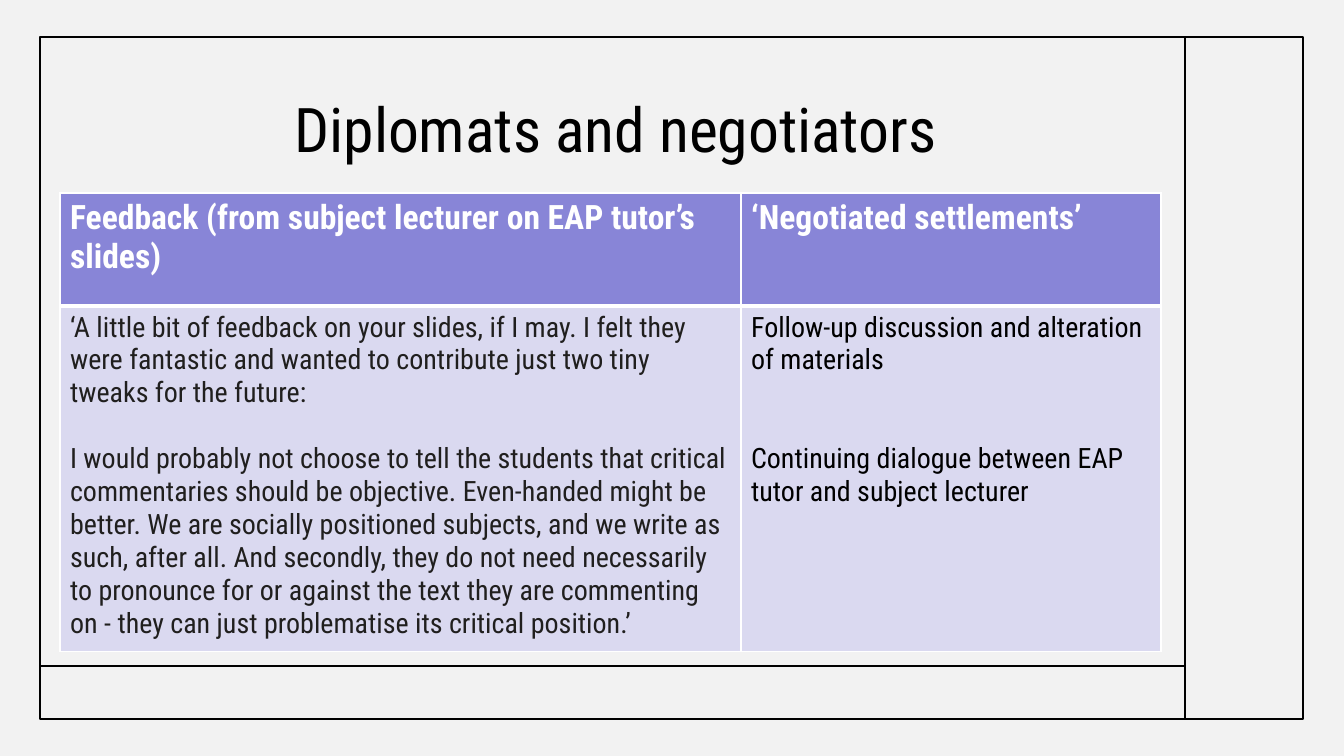
"""Build the slide 'Diplomats and negotiators' with its feedback table."""
from dataclasses import dataclass

from lxml.etree import SubElement
from pptx import Presentation
from pptx.dml.color import RGBColor
from pptx.enum.shapes import MSO_CONNECTOR, MSO_SHAPE
from pptx.enum.text import MSO_ANCHOR, PP_ALIGN
from pptx.oxml import parse_xml
from pptx.oxml.ns import nsdecls, qn
from pptx.util import Pt

TITLE = "Diplomats and negotiators"
HEADINGS = [
    "Feedback (from subject lecturer on EAP tutor’s slides)",
    "‘Negotiated settlements’",
]
FEEDBACK = [
    "‘A little bit of feedback on your slides, if I may. I felt they were fantastic "
    "and wanted to contribute just two tiny tweaks for the future:",
    "I would probably not choose to tell the students that critical commentaries "
    "should be objective. Even-handed might be better. We are socially positioned "
    "subjects, and we write as such, after all. And secondly, they do not need "
    "necessarily to pronounce for or against the text they are commenting on - they "
    "can just problematise its critical position.’",
]
SETTLEMENTS = [
    "Follow-up discussion and alteration of materials",
    "Continuing dialogue between EAP tutor and subject lecturer",
]

SLIDE_SIZE = (1344, 756)
FRAME = (40, 37, 1263, 682)
DIVIDER_X, FOOTER_Y = 1185, 666
TITLE_BOX = (93, 60, 1046, 146)
TABLE_LEFT, TABLE_TOP = 60, 193
COLUMN_WIDTHS = (681, 420)
ROW_HEIGHTS = (113, 340)


@dataclass(frozen=True)
class Theme:
    """Colours, font and type sizes."""
    font: str = "Roboto Condensed"
    background: str = "F2F2F2"
    ink: str = "000000"
    quote: str = "201F1E"
    white: str = "FFFFFF"
    header: str = "8885D7"
    body: str = "DAD9F0"
    title_size: int = 44
    header_size: int = 24
    body_size: int = 20
    body_line: float = 23.5
    thin: int = 1
    thick: int = 3


THEME = Theme()


def px(length):
    """Turn pixels into EMU."""
    return round(length * 914400 / 100.8)


def rgb(colour):
    """Turn a hex string into a colour."""
    return RGBColor.from_string(colour)


def add_run(paragraph, text, size, colour, bold=False):
    """Add one styled run."""
    run = paragraph.add_run()
    run.text = text
    run.font.name = THEME.font
    run.font.size = Pt(size)
    run.font.bold = bold
    run.font.color.rgb = rgb(colour)


def add_rule(slide, start, end):
    """Draw a thin straight line."""
    points = [px(value) for value in (*start, *end)]
    rule = slide.shapes.add_connector(MSO_CONNECTOR.STRAIGHT, *points)
    rule.line.color.rgb = rgb(THEME.ink)
    rule.line.width = Pt(THEME.thin)
    SubElement(rule.element.spPr, qn("a:effectLst"))


def add_frame(slide):
    """Draw the outer frame and its two dividing lines."""
    left, top, width, height = FRAME
    frame = slide.shapes.add_shape(MSO_SHAPE.RECTANGLE, *map(px, FRAME))
    frame.shadow.inherit = False
    frame.fill.background()
    frame.line.color.rgb = rgb(THEME.ink)
    frame.line.width = Pt(THEME.thin)
    add_rule(slide, (DIVIDER_X, top), (DIVIDER_X, top + height))
    add_rule(slide, (left, FOOTER_Y), (DIVIDER_X, FOOTER_Y))


def add_title(slide):
    """Place the centred title."""
    text_frame = slide.shapes.add_textbox(*map(px, TITLE_BOX)).text_frame
    text_frame.word_wrap = True
    text_frame.vertical_anchor = MSO_ANCHOR.MIDDLE
    paragraph = text_frame.paragraphs[0]
    paragraph.alignment = PP_ALIGN.CENTER
    paragraph.line_spacing = 0.9
    add_run(paragraph, TITLE, THEME.title_size, THEME.ink)


def style_cell(cell, fill, top, bottom):
    """Fill a cell and give it white borders."""
    cell.fill.solid()
    cell.fill.fore_color.rgb = rgb(fill)
    properties = cell._tc.get_or_add_tcPr()
    widths = {"lnL": THEME.thin, "lnR": THEME.thin, "lnT": top, "lnB": bottom}
    for position, (side, width) in enumerate(widths.items()):
        properties.insert(position, parse_xml(
            f'<a:{side} {nsdecls("a")} w="{Pt(width)}"><a:solidFill>'
            f'<a:srgbClr val="{THEME.white}"/></a:solidFill></a:{side}>'))


def fill_body(cell, texts, colour, blank_lines):
    """Write body paragraphs with a gap measured in lines."""
    for index, text in enumerate(texts):
        text_frame = cell.text_frame
        paragraph = text_frame.add_paragraph() if index else text_frame.paragraphs[0]
        if index:
            paragraph.space_before = Pt(blank_lines * THEME.body_line)
        add_run(paragraph, text, THEME.body_size, colour)


def add_feedback_table(slide):
    """Place the table of feedback and settlements."""
    bounds = (TABLE_LEFT, TABLE_TOP, sum(COLUMN_WIDTHS), sum(ROW_HEIGHTS))
    table = slide.shapes.add_table(2, 2, *map(px, bounds)).table
    table.horz_banding = False
    for column, width in zip(table.columns, COLUMN_WIDTHS):
        column.width = px(width)
    for row, height in zip(table.rows, ROW_HEIGHTS):
        row.height = px(height)
    bodies = [(FEEDBACK, THEME.quote, 1), (SETTLEMENTS, THEME.ink, 2)]
    for index, (heading, body) in enumerate(zip(HEADINGS, bodies)):
        header_cell, body_cell = table.cell(0, index), table.cell(1, index)
        style_cell(header_cell, THEME.header, THEME.thin, THEME.thick)
        style_cell(body_cell, THEME.body, THEME.thick, THEME.thin)
        add_run(header_cell.text_frame.paragraphs[0], heading,
                THEME.header_size, THEME.white, bold=True)
        fill_body(body_cell, *body)


def main():
    """Build and save the presentation."""
    presentation = Presentation()
    presentation.slide_width, presentation.slide_height = map(px, SLIDE_SIZE)
    slide = presentation.slides.add_slide(presentation.slide_layouts[6])
    slide.background.fill.solid()
    slide.background.fill.fore_color.rgb = rgb(THEME.background)
    add_frame(slide)
    add_title(slide)
    add_feedback_table(slide)
    presentation.save("out.pptx")


if __name__ == "__main__":
    main()
